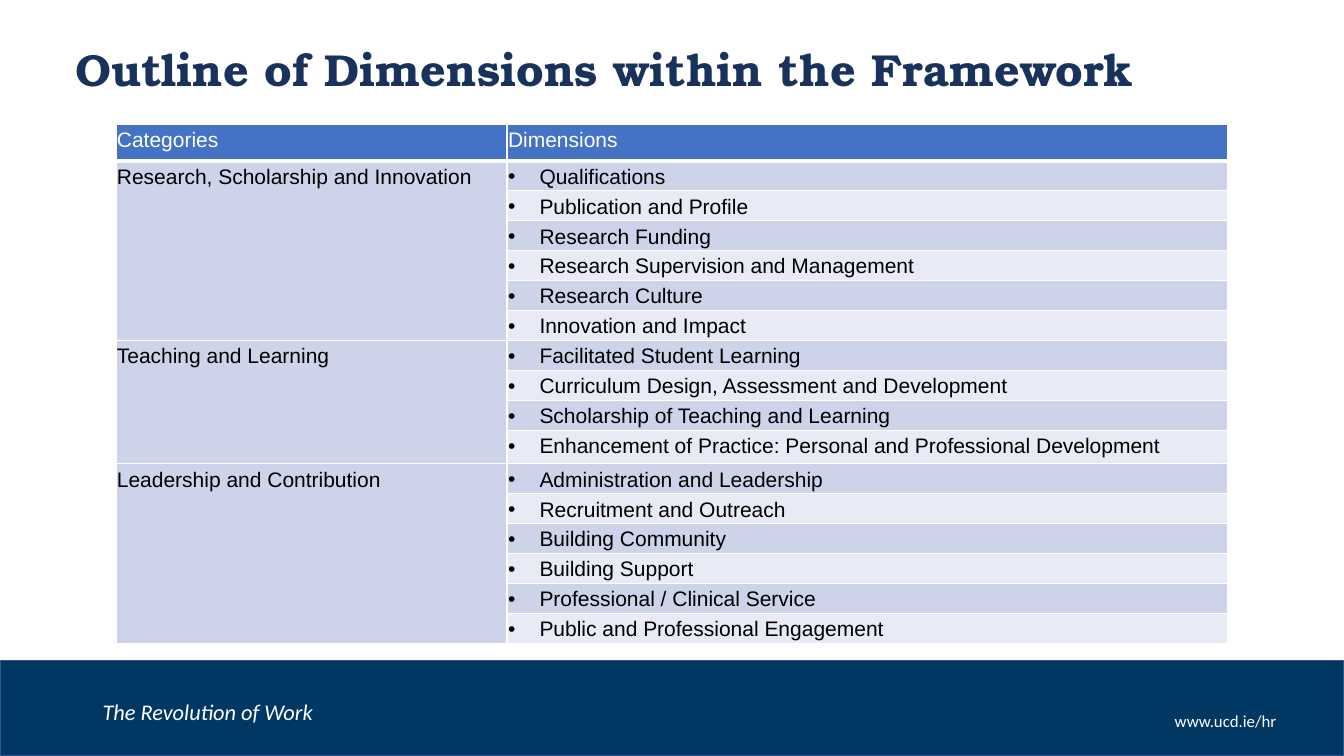
from dataclasses import dataclass

from lxml import etree
from pptx import Presentation
from pptx.dml.color import RGBColor
from pptx.enum.shapes import MSO_SHAPE
from pptx.enum.text import MSO_ANCHOR, MSO_AUTO_SIZE, PP_ALIGN
from pptx.oxml.ns import qn
from pptx.util import Pt

RECTANGLE = MSO_SHAPE.RECTANGLE
TOP, MIDDLE = MSO_ANCHOR.TOP, MSO_ANCHOR.MIDDLE
LEFT, RIGHT = PP_ALIGN.LEFT, PP_ALIGN.RIGHT
FIT_SHAPE = MSO_AUTO_SIZE.SHAPE_TO_FIT_TEXT

WHITE = RGBColor(0xFF, 0xFF, 0xFF)
BLACK = RGBColor(0x00, 0x00, 0x00)
TITLE_NAVY = RGBColor(0x18, 0x32, 0x5C)
FOOTER_NAVY = RGBColor(0x00, 0x38, 0x63)
FOOTER_EDGE = RGBColor(0x31, 0x53, 0x8F)
HEADER_BLUE = RGBColor(0x44, 0x72, 0xC4)
BAND_DARK = RGBColor(0xCD, 0xD4, 0xEA)
BAND_LIGHT = RGBColor(0xE8, 0xEB, 0xF5)

TITLE_ONLY_LAYOUT = 5
COLUMN_WIDTHS = (Pt(279.4), Pt(514.8))
HEADER_HEIGHT, ROW_HEIGHT = Pt(25.9), Pt(18.9)
TALLER_ROWS = {8: Pt(20), 10: Pt(23.8)}
BULLET_INDENT = Pt(22.5)
THIN_BORDER, HEADER_BORDER = Pt(1), Pt(3)


@dataclass(frozen=True)
class Category:
    name: str
    dimensions: tuple[str, ...]


@dataclass(frozen=True)
class FooterText:
    text: str
    left: float
    top: float
    width: float
    size: float
    alignment: PP_ALIGN
    italic: bool


CATEGORIES = (
    Category("Research, Scholarship and Innovation", (
        "Qualifications",
        "Publication and Profile",
        "Research Funding",
        "Research Supervision and Management",
        "Research Culture",
        "Innovation and Impact",
    )),
    Category("Teaching and Learning", (
        "Facilitated Student Learning",
        "Curriculum Design, Assessment and Development",
        "Scholarship of Teaching and Learning",
        "Enhancement of Practice: Personal and Professional Development",
    )),
    Category("Leadership and Contribution", (
        "Administration and Leadership",
        "Recruitment and Outreach",
        "Building Community",
        "Building Support",
        "Professional / Clinical Service",
        "Public and Professional Engagement",
    )),
)

FOOTER_TEXTS = (
    FooterText("www.ucd.ie/hr", 689.8, 500.4, 229, 12, RIGHT, False),
    FooterText("The Revolution of Work", 66.2, 493.9, 216, 16, LEFT, True),
)


def add_run(paragraph, text: str, font_name: str, size: float, color: RGBColor,
            bold: bool = False, italic: bool = False) -> None:
    run = paragraph.add_run()
    run.text = text
    font = run.font
    font.name, font.size = font_name, Pt(size)
    font.bold, font.italic = bold, italic
    font.color.rgb = color


def add_footer(slide) -> None:
    bar = slide.shapes.add_shape(RECTANGLE, Pt(0), Pt(471.6), Pt(960), Pt(68.4))
    bar.shadow.inherit = False
    bar.fill.solid()
    bar.fill.fore_color.rgb = FOOTER_NAVY
    bar.line.color.rgb = FOOTER_EDGE
    bar.line.width = Pt(1)
    for item in FOOTER_TEXTS:
        box = slide.shapes.add_textbox(Pt(item.left), Pt(item.top), Pt(item.width), Pt(28.8))
        frame = box.text_frame
        frame.word_wrap = True
        frame.vertical_anchor = MIDDLE
        paragraph = frame.paragraphs[0]
        paragraph.alignment = item.alignment
        add_run(paragraph, item.text, "Calibri", item.size, WHITE, italic=item.italic)


def add_bullet(paragraph) -> None:
    properties = paragraph._p.get_or_add_pPr()
    properties.set("marL", str(BULLET_INDENT))
    properties.set("indent", str(-BULLET_INDENT))
    bullet_color = etree.SubElement(properties, qn("a:buClr"))
    etree.SubElement(bullet_color, qn("a:srgbClr"), val=str(BLACK))
    etree.SubElement(properties, qn("a:buFont"), typeface="Arial")
    etree.SubElement(properties, qn("a:buChar"), char="•")


def style_cell(cell, fill: RGBColor, top: int, bottom: int) -> None:
    cell.margin_left = cell.margin_right = cell.margin_top = Pt(0.7)
    cell.margin_bottom = Pt(0)
    cell.fill.solid()
    cell.fill.fore_color.rgb = fill
    properties = cell._tc.get_or_add_tcPr()
    borders = (("a:lnL", THIN_BORDER), ("a:lnR", THIN_BORDER),
               ("a:lnT", top), ("a:lnB", bottom))
    for position, (tag, width) in enumerate(borders):
        border = etree.Element(qn(tag), w=str(width))
        line_fill = etree.SubElement(border, qn("a:solidFill"))
        etree.SubElement(line_fill, qn("a:srgbClr"), val=str(WHITE))
        properties.insert(position, border)


def write_cell(cell, text: str, color: RGBColor, bulleted: bool = False) -> None:
    paragraph = cell.text_frame.paragraphs[0]
    if bulleted:
        add_bullet(paragraph)
    paragraph.line_spacing = 1.15
    add_run(paragraph, text, "Arial", 15, color)


def add_dimensions_table(slide) -> None:
    row_count = 1 + sum(len(category.dimensions) for category in CATEGORIES)
    frame = slide.shapes.add_table(row_count, len(COLUMN_WIDTHS), Pt(82.8), Pt(88.9),
                                   sum(COLUMN_WIDTHS), Pt(343.4))
    table = frame.table
    table.first_row = table.horz_banding = False
    for column, width in zip(table.columns, COLUMN_WIDTHS):
        column.width = width

    # Row heights, fills and borders
    for index, row in enumerate(table.rows):
        row.height = TALLER_ROWS.get(index, ROW_HEIGHT) if index else HEADER_HEIGHT
        band = BAND_DARK if index % 2 else BAND_LIGHT
        fills = (BAND_DARK, band) if index else (HEADER_BLUE, HEADER_BLUE)
        top = HEADER_BORDER if index == 1 else THIN_BORDER
        bottom = THIN_BORDER if index else HEADER_BORDER
        for cell, fill in zip(row.cells, fills):
            style_cell(cell, fill, top, bottom)

    # Header and category groups
    for column_index, heading in enumerate(("Categories", "Dimensions")):
        write_cell(table.cell(0, column_index), heading, WHITE)
    first_row = 1
    for category in CATEGORIES:
        next_row = first_row + len(category.dimensions)
        table.cell(first_row, 0).merge(table.cell(next_row - 1, 0))
        write_cell(table.cell(first_row, 0), category.name, BLACK)
        for row_index, dimension in enumerate(category.dimensions, first_row):
            write_cell(table.cell(row_index, 1), dimension, BLACK, bulleted=True)
        first_row = next_row


def set_title(slide) -> None:
    title = slide.shapes.title
    title.left, title.top, title.width, title.height = Pt(46.8), Pt(25.9), Pt(806.4), Pt(46.1)
    frame = title.text_frame
    frame.word_wrap = True
    frame.auto_size = FIT_SHAPE
    frame.vertical_anchor = TOP
    paragraph = frame.paragraphs[0]
    paragraph.alignment = LEFT
    add_run(paragraph, "Outline of Dimensions within the Framework",
            "TeX Gyre Bonum", 32, TITLE_NAVY, bold=True)


def main() -> None:
    presentation = Presentation()
    presentation.slide_width, presentation.slide_height = Pt(960), Pt(540)
    slide = presentation.slides.add_slide(presentation.slide_layouts[TITLE_ONLY_LAYOUT])
    add_footer(slide)
    add_dimensions_table(slide)
    set_title(slide)
    presentation.save("out.pptx")


if __name__ == "__main__":
    main()
